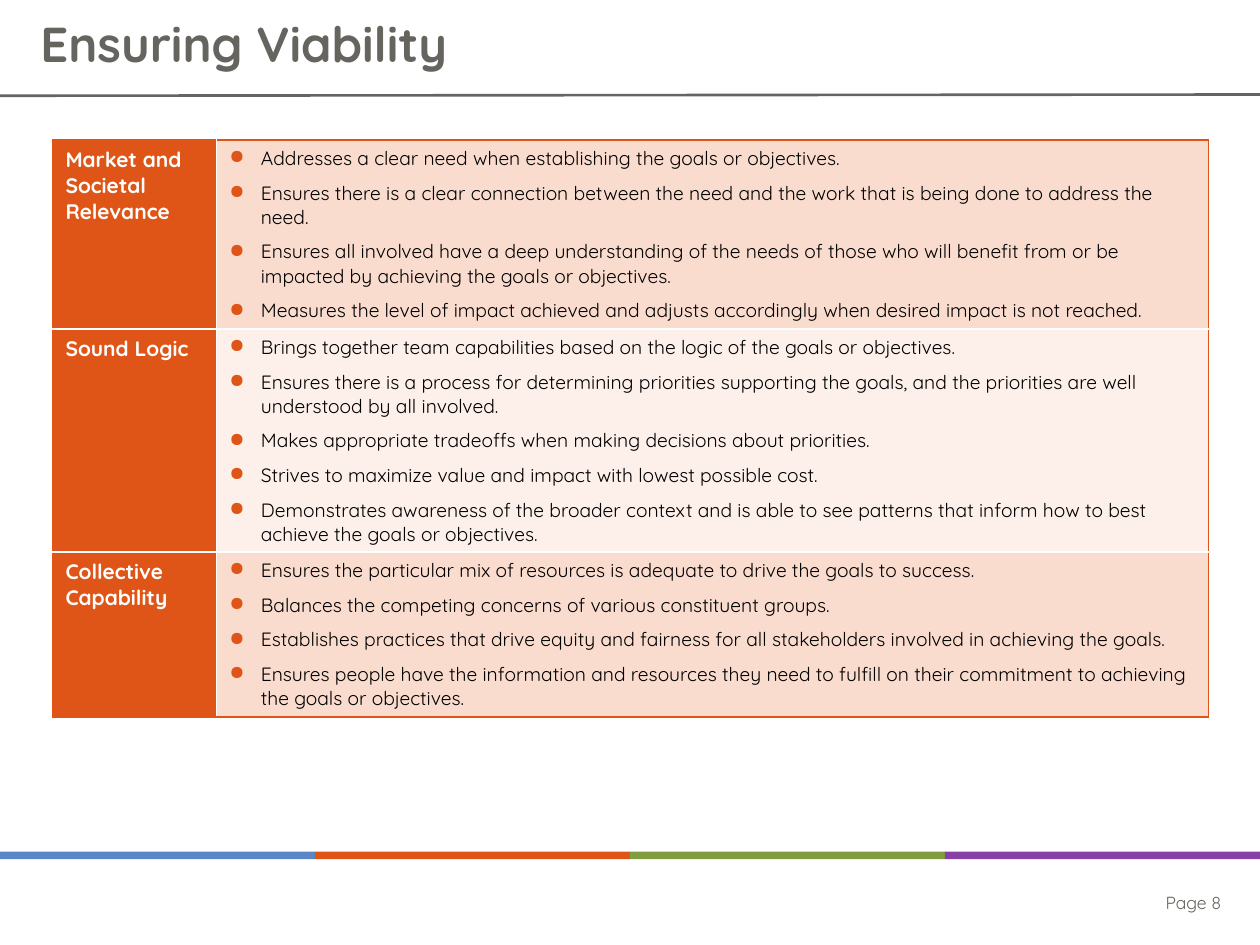
from lxml.etree import SubElement as Sub
from pptx import Presentation
from pptx.dml.color import RGBColor
from pptx.enum.shapes import MSO_CONNECTOR as Conn, MSO_SHAPE as Geo
from pptx.enum.text import MSO_ANCHOR as Anchor, PP_ALIGN as Align
from pptx.oxml import parse_xml
from pptx.oxml.ns import nsdecls, qn
from pptx.util import Inches, Pt

ORANGE, GREY, WHITE = "DF5517", "66645E", "FFFFFF"


def paint(item, code):
    if hasattr(item, "solid"):
        item.solid()
        item = item.fore_color
    item.rgb = RGBColor.from_string(code)


def write(para, text, size, code, bold=False):
    run = para.add_run()
    run.text = text
    run.font.name = "Quicksand"
    run.font.size = Pt(size)
    run.font.bold = bold
    paint(run.font.color, code)


deck = Presentation()
deck.slide_width = W = Inches(10)
deck.slide_height = H = Inches(7.5)
slide = deck.slides.add_slide(deck.slide_layouts[5])
shapes = slide.shapes

rule = shapes.add_connector(Conn.STRAIGHT, 0, Inches(0.76), W, H // 10)
rule.line.width = Pt(1.5)
paint(rule.line.color, GREY)
Sub(rule._element.spPr, qn("a:effectLst"))

for col, code in enumerate(["5A87C6", ORANGE, "829C42", "8640A6"]):
    bar = shapes.add_shape(Geo.RECTANGLE, col * W // 4, Inches(6.76), W // 4, Inches(0.06))
    bar.shadow.inherit = False
    paint(bar.fill, code)
    bar.line.fill.background()

page = shapes.add_textbox(Inches(8.12), Inches(7.03), Inches(1.67), Inches(0.27)).text_frame
page.word_wrap = True
page.paragraphs[0].alignment = Align.RIGHT
write(page.paragraphs[0], "Page 8", 10, GREY)

title = shapes.title
title.left, title.top = Inches(0.22), 0
title.width, title.height = W - 2 * title.left, Inches(0.74)
title.text_frame.vertical_anchor = Anchor.MIDDLE
head = title.text_frame.paragraphs[0]
head.alignment = Align.LEFT
head.line_spacing = 0.9
write(head, "Ensuring Viability", 28, GREY, True)

themes = [
    ("Market and Societal Relevance", 1.5, "FADCCF", [
        "Addresses a clear need when establishing the goals or objectives.",
        "Ensures there is a clear connection between the need and the work that is being done to address the need.",
        "Ensures all involved have a deep understanding of the needs of those who will benefit from or be impacted by achieving the goals or objectives.",
        "Measures the level of impact achieved and adjusts accordingly when desired impact is not reached.",
    ]),
    ("Sound Logic", 1.77, "FDEFE9", [
        "Brings together team capabilities based on the logic of the goals or objectives.",
        "Ensures there is a process for determining priorities supporting the goals, and the priorities are well understood by all involved.",
        "Makes appropriate tradeoffs when making decisions about priorities.",
        "Strives to maximize value and impact with lowest possible cost.",
        "Demonstrates awareness of the broader context and is able to see patterns that inform how to best achieve the goals or objectives.",
    ]),
    ("Collective Capability", 1.31, "FADCCF", [
        "Ensures the particular mix of resources is adequate to drive the goals to success.",
        "Balances the competing concerns of various constituent groups.",
        "Establishes practices that drive equity and fairness for all stakeholders involved in achieving the goals.",
        "Ensures people have the information and resources they need to fulfill on their commitment to achieving the goals or objectives.",
    ]),
]

tall = Inches(sum(theme[1] for theme in themes))
grid = shapes.add_table(len(themes), 2, Inches(0.42), Inches(1.11), Inches(9.17), tall).table
grid.first_row = grid.horz_banding = False
grid.columns[0].width, grid.columns[1].width = Inches(1.3), Inches(7.87)
last = len(themes) - 1

for row, (name, high, tint, points) in enumerate(themes):
    grid.rows[row].height = Inches(high)
    for col, texts in enumerate([[name], points]):
        cell = grid.cell(row, col)
        paint(cell.fill, [ORANGE, tint][col])
        outer = {"L": col == 0, "R": col == 1, "T": row == 0, "B": row == last}
        for spot, (side, edge) in enumerate(outer.items()):
            code = ORANGE if edge else WHITE
            cell._tc.tcPr.insert(spot, parse_xml(
                f'<a:ln{side} {nsdecls("a")} w="12700"><a:solidFill>'
                f'<a:srgbClr val="{code}"/></a:solidFill></a:ln{side}>'))
        frame = cell.text_frame
        for num, text in enumerate(texts):
            para = frame.add_paragraph() if num else frame.paragraphs[0]
            if col:
                props = para._p.get_or_add_pPr()
                props.set("marL", str(Inches(0.25)))
                props.set("indent", str(-Inches(0.25)))
                Sub(Sub(props, qn("a:buClr")), qn("a:srgbClr"), val=ORANGE)
                Sub(props, qn("a:buChar"), char="●")
            para.space_after = Pt(6)
            write(para, text, 11 if col else 12, "000000" if col else WHITE, not col)

deck.save("out.pptx")
